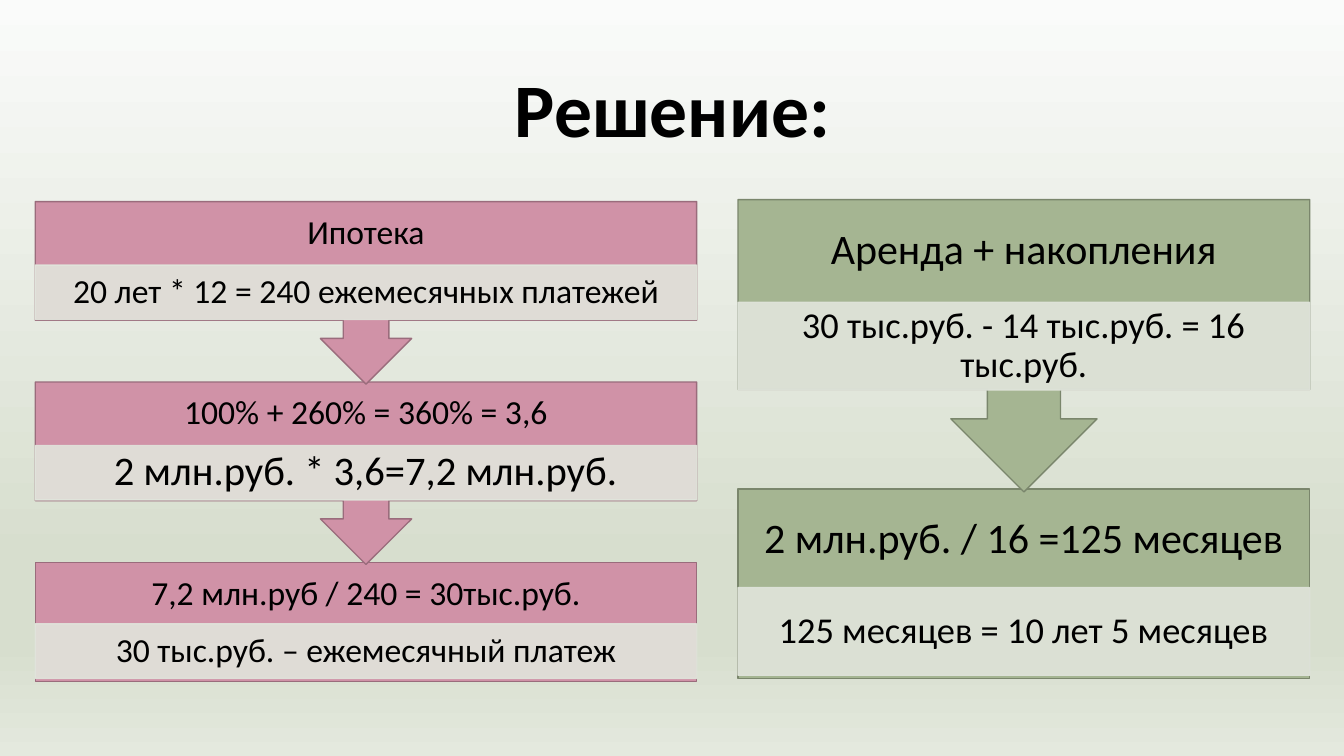
from lxml import etree
from pptx import Presentation
from pptx.dml.color import RGBColor
from pptx.enum import shapes, text
from pptx.oxml.ns import qn
from pptx.util import Inches, Pt

FONT = "Calibri"
BLACK = RGBColor(0x00, 0x00, 0x00)
PINK, PINK_EDGE = RGBColor(0xD0, 0x92, 0xA7), RGBColor(0x9A, 0x6C, 0x7C)
GREEN, GREEN_EDGE = RGBColor(0xA5, 0xB5, 0x92), RGBColor(0x7A, 0x86, 0x6C)
PALE = RGBColor(0xE1, 0xE5, 0xDC)
PALE_OPACITY = 90
BACKGROUND = [(0, "FAFBFA"), (74, "D7DECE"), (85, "D7DECE"), (100, "E4E9DE")]

TITLE = "Решение:"

# Each step: top, offset of the detail band, heading, detail, detail size
FLOWS = [
    dict(left=0.35, width=6.56, fill=PINK, edge=PINK_EDGE,
         callout_height=1.81, last_height=1.18,
         heading_height=0.63, heading_size=24, heading_inset=0.19,
         detail_height=0.54, detail_inset=0.19,
         steps=[
             (2.0, 0.63, "Ипотека",
              "20 лет * 12 = 240 ежемесячных платежей", 24),
             (3.79, 0.63, "100% + 260% = 360% = 3,6",
              "2 млн.руб. * 3,6=7,2 млн.руб.", 29),
             (5.58, 0.61, "7,2 млн.руб / 240 = 30тыс.руб.",
              "30 тыс.руб. – ежемесячный платеж", 24),
         ]),
    dict(left=7.32, width=5.67, fill=GREEN, edge=GREEN_EDGE,
         callout_height=2.9, last_height=1.88,
         heading_height=1.02, heading_size=30, heading_inset=0.23,
         detail_height=0.87, detail_inset=0.2,
         steps=[
             (1.98, 1.02, "Аренда + накопления",
              "30 тыс.руб. - 14 тыс.руб. = 16 тыс.руб.", 26),
             (4.85, 0.98, "2 млн.руб. / 16 =125 месяцев",
              "125 месяцев = 10 лет 5 месяцев", 26),
         ]),
]


def write(holder, words, size, side_inset, end_inset, bold=False):
    frame = holder.text_frame
    frame.text = words
    frame.word_wrap = True
    frame.auto_size = text.MSO_AUTO_SIZE.NONE
    frame.vertical_anchor = text.MSO_ANCHOR.MIDDLE
    frame.margin_left = frame.margin_right = Inches(side_inset)
    frame.margin_top = frame.margin_bottom = Inches(end_inset)
    paragraph = frame.paragraphs[0]
    paragraph.alignment = text.PP_ALIGN.CENTER
    paragraph.line_spacing = 0.9
    font = paragraph.runs[0].font
    font.name, font.size, font.bold = FONT, Pt(size), bold
    font.color.rgb = BLACK


def add_block(slide, preset, box, fill, edge):
    block = slide.shapes.add_shape(preset, *map(Inches, box))
    block.shadow.inherit = False
    block.fill.solid()
    block.fill.fore_color.rgb = fill
    block.line.color.rgb = edge
    block.line.width = Pt(1)
    return block


def add_step(slide, flow, step, is_last):
    top, detail_offset, heading, detail, detail_size = step
    left, width = flow["left"], flow["width"]

    # Coloured block; all but the last point down to the next step
    preset = shapes.MSO_SHAPE.RECTANGLE if is_last else shapes.MSO_SHAPE.UP_ARROW_CALLOUT
    height = flow["last_height"] if is_last else flow["callout_height"]
    block = add_block(slide, preset, (left, top, width, height), flow["fill"], flow["edge"])
    block.rotation = 0 if is_last else 180

    # Heading, kept upright above the turned callout
    heading_box = (left, top, width, flow["heading_height"])
    inset = flow["heading_inset"]
    write(slide.shapes.add_textbox(*map(Inches, heading_box)), heading,
          flow["heading_size"], inset, inset)

    # Translucent detail band
    band_box = (left, top + detail_offset, width, flow["detail_height"])
    band = add_block(slide, shapes.MSO_SHAPE.RECTANGLE, band_box, PALE, PALE)
    for colour in band._element.spPr.iter(qn("a:srgbClr")):
        etree.SubElement(colour, qn("a:alpha"), val=str(PALE_OPACITY * 1000))
    write(band, detail, detail_size, flow["detail_inset"], 0.04)


def paint_background(slide):
    fill = slide.background.fill
    fill.gradient()
    fill.gradient_angle = 270
    stops = next(slide._element.iter(qn("a:gsLst")))
    for stop in list(stops):
        stops.remove(stop)
    for position, colour in BACKGROUND:
        stop = etree.SubElement(stops, qn("a:gs"), pos=str(position * 1000))
        etree.SubElement(stop, qn("a:srgbClr"), val=colour)


def main():
    deck = Presentation()
    deck.slide_width, deck.slide_height = Inches(13.33), Inches(7.5)
    slide = deck.slides.add_slide(deck.slide_layouts[5])
    paint_background(slide)

    # Title
    title = slide.shapes.title
    title.left, title.top = Inches(0.92), Inches(0.4)
    title.width, title.height = Inches(11.5), Inches(1.45)
    write(title, TITLE, 54, 0.1, 0.05, bold=True)

    # Flows, drawn bottom up so each arrow tip lies over the next step
    for flow in FLOWS:
        last_step = flow["steps"][-1]
        for step in reversed(flow["steps"]):
            add_step(slide, flow, step, step is last_step)

    deck.save("out.pptx")


if __name__ == "__main__":
    main()
